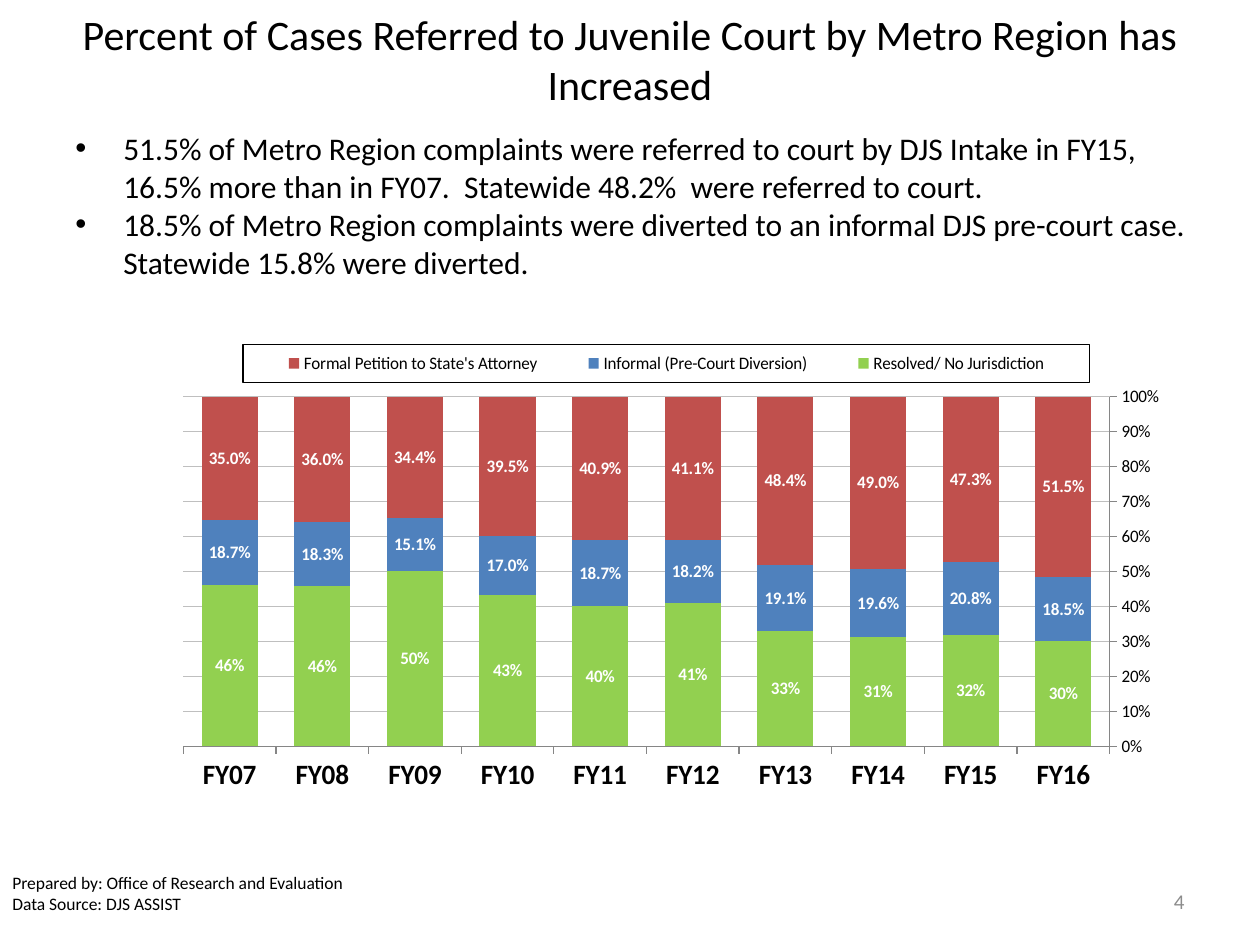
from lxml import etree
from pptx import Presentation
from pptx.chart.data import CategoryChartData
from pptx.dml.color import RGBColor
from pptx.enum.chart import (XL_AXIS_CROSSES, XL_CHART_TYPE, XL_LABEL_POSITION,
                             XL_LEGEND_POSITION, XL_TICK_MARK)
from pptx.enum.text import MSO_ANCHOR, PP_ALIGN
from pptx.oxml import parse_xml
from pptx.oxml.ns import nsdecls, qn
from pptx.util import Inches, Pt

LEFT, CENTER, RIGHT = PP_ALIGN.LEFT, PP_ALIGN.CENTER, PP_ALIGN.RIGHT
MIDDLE = MSO_ANCHOR.MIDDLE
STACKED_100 = XL_CHART_TYPE.COLUMN_STACKED_100
LEGEND_RIGHT = XL_LEGEND_POSITION.RIGHT
LABEL_CENTER = XL_LABEL_POSITION.CENTER
CROSS_MAX = XL_AXIS_CROSSES.MAXIMUM
TICK_OUT, TICK_NONE = XL_TICK_MARK.OUTSIDE, XL_TICK_MARK.NONE

FONT = "Calibri"
BLACK, WHITE, GRAY = "000000", "FFFFFF", "8C8C8C"
AXIS_GRAY, GRID_GRAY = "868686", "BFBFBF"

TITLE = "Percent of Cases Referred to Juvenile Court by Metro Region has Increased"
FINDINGS = [
    "51.5% of Metro Region complaints were referred to court by DJS Intake in FY15, "
    "16.5% more than in FY07.  Statewide 48.2%  were referred to court.",
    "18.5% of Metro Region complaints were diverted to an informal DJS pre-court case.  "
    "Statewide 15.8% were diverted.",
]
CREDITS = ["Prepared by: Office of Research and Evaluation",
           "Data Source:\u00a0DJS ASSIST"]

# Newest year first; the category axis runs in reverse
YEARS = [f"FY{year:02d}" for year in range(16, 6, -1)]
OUTCOMES = [  # name, colour, label format, shares
    ("Resolved/ No Jurisdiction", "92D050", "0%",
     [0.3, 0.32, 0.31, 0.33, 0.41, 0.4, 0.43, 0.5, 0.46, 0.46]),
    ("Informal (Pre-Court Diversion)", "4F81BD", "0.0%",
     [0.185, 0.208, 0.196, 0.191, 0.182, 0.187, 0.17, 0.151, 0.183, 0.187]),
    ("Formal Petition to State's Attorney", "C0504D", "0.0%",
     [0.515, 0.473, 0.49, 0.484, 0.411, 0.409, 0.395, 0.344, 0.36, 0.35]),
]


def rgb(hex_color):
    return RGBColor.from_string(hex_color)


def style_font(font, size, color=BLACK, bold=False):
    font.name = FONT
    font.size = Pt(size)
    font.bold = bold
    font.color.rgb = rgb(color)


def add_bullet(paragraph, indent):
    properties = paragraph._p.get_or_add_pPr()
    properties.set("marL", str(indent))
    properties.set("indent", str(-indent))
    etree.SubElement(properties, qn("a:buFont")).set("typeface", "Arial")
    etree.SubElement(properties, qn("a:buChar")).set("char", "•")


def add_text(slide, box, lines, size, color=BLACK, align=LEFT, bulleted=False):
    frame = slide.shapes.add_textbox(*map(Inches, box)).text_frame
    frame.word_wrap = True
    frame.vertical_anchor = MIDDLE
    frame.text = "\n".join(lines)
    for paragraph in frame.paragraphs:
        paragraph.alignment = align
        style_font(paragraph.font, size, color)
        if bulleted:
            add_bullet(paragraph, Inches(0.38))


def manual_layout(box, inner=False):
    """Chart layout from left, top, width, height as shares of the chart."""
    target = '<c:layoutTarget val="inner"/>' if inner else ""
    sizes = "".join(f'<c:{tag} val="{value}"/>' for tag, value in zip("xywh", box))
    return parse_xml(
        f'<c:layout {nsdecls("c")}><c:manualLayout>{target}'
        f'<c:xMode val="edge"/><c:yMode val="edge"/>{sizes}'
        '</c:manualLayout></c:layout>')


def replace_layout(parent, position, layout):
    for old in parent.findall(qn("c:layout")):
        parent.remove(old)
    parent.insert(position, layout)


def style_legend(chart):
    chart.has_legend = True
    legend = chart.legend
    legend.position = LEGEND_RIGHT
    legend.include_in_layout = True
    style_font(legend.font, 10)
    replace_layout(legend._element, 1, manual_layout((0.11, 0.04, 0.85, 0.08)))
    outline = parse_xml(
        f'<c:spPr {nsdecls("c", "a")}><a:ln w="{Pt(0.75)}"><a:solidFill>'
        f'<a:srgbClr val="{BLACK}"/></a:solidFill></a:ln></c:spPr>')
    legend._element.find(qn("c:overlay")).addnext(outline)


def style_axes(chart):
    years, shares = chart.category_axis, chart.value_axis
    for axis in (years, shares):
        axis.major_tick_mark = TICK_OUT
        axis.minor_tick_mark = TICK_NONE
        axis.format.line.color.rgb = rgb(AXIS_GRAY)
        axis.format.line.width = Pt(0.75)
    years.reverse_order = True
    years.crosses = CROSS_MAX  # keeps the percent scale on the left
    style_font(years.tick_labels.font, 16, bold=True)

    shares.minimum_scale, shares.maximum_scale, shares.major_unit = 0, 1, 0.1
    shares.tick_labels.number_format = "0%"
    shares.tick_labels.number_format_is_linked = False
    style_font(shares.tick_labels.font, 10)
    shares.has_major_gridlines = True
    shares.major_gridlines.format.line.color.rgb = rgb(GRID_GRAY)
    shares.major_gridlines.format.line.width = Pt(0.75)


def add_outcome_chart(slide, box):
    data = CategoryChartData()
    data.categories = YEARS
    for name, _, number_format, shares in OUTCOMES:
        data.add_series(name, shares, number_format)
    chart = slide.shapes.add_chart(STACKED_100, *map(Inches, box), data).chart
    chart.has_title = False
    style_font(chart.font, 10)

    plot = chart.plots[0]
    plot.gap_width, plot.overlap, plot.vary_by_categories = 65, 100, False
    for series, (_, color, number_format, _) in zip(plot.series, OUTCOMES):
        series.format.fill.solid()
        series.format.fill.fore_color.rgb = rgb(color)
        labels = series.data_labels
        labels.show_value = True
        labels.position = LABEL_CENTER
        labels.number_format = number_format
        labels.number_format_is_linked = False
        style_font(labels.font, 10, WHITE, bold=True)

    style_axes(chart)
    style_legend(chart)
    plot_area = chart._chartSpace.chart.plotArea
    replace_layout(plot_area, 0, manual_layout((0.05, 0.15, 0.93, 0.73), inner=True))


def main():
    deck = Presentation()
    deck.slide_width, deck.slide_height = Inches(10), Inches(7.5)
    slide = deck.slides.add_slide(deck.slide_layouts[6])

    # Heading and findings
    add_text(slide, (0, 0.18, 10, 0.57), [TITLE], 24, align=CENTER)
    add_text(slide, (0.5, 0.75, 9.25, 1.75), FINDINGS, 18, bulleted=True)

    # Outcomes by year
    add_outcome_chart(slide, (1.06, 2.58, 8.14, 3.8))

    # Footer
    add_text(slide, (7.17, 6.95, 2.33, 0.4), ["4"], 12, GRAY, RIGHT)
    add_text(slide, (0, 6.83, 2.92, 0.52), CREDITS, 10)

    deck.save("out.pptx")


if __name__ == "__main__":
    main()
